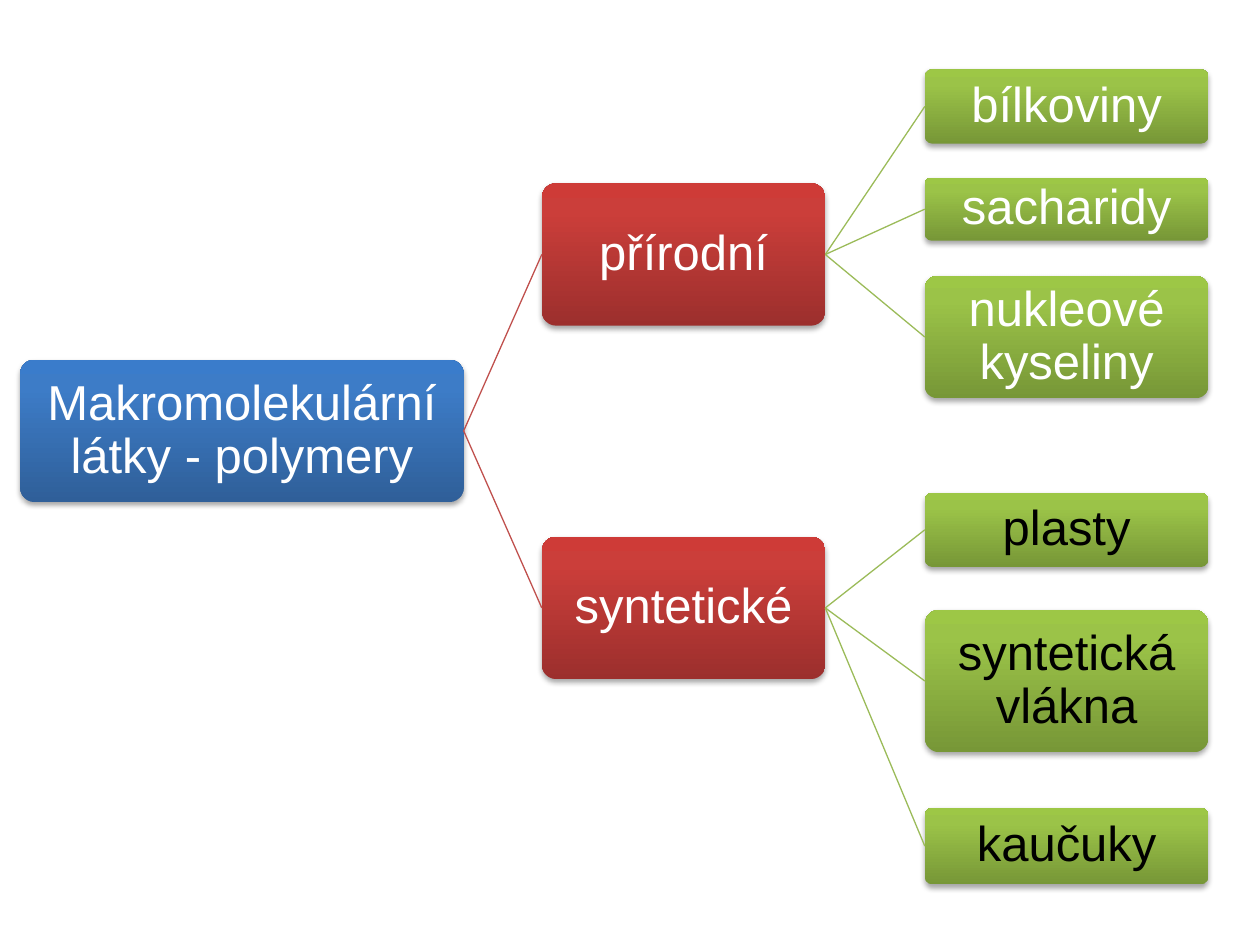
import lxml.etree
import pptx
import pptx.dml.color
import pptx.enum.shapes
import pptx.enum.text
import pptx.oxml.ns
import pptx.util

COLUMNS, ROWS = 100, 75
BLUE = ("2F5F99", "3D7CC7", "3A7CCB")
RED = ("9C2F2D", "CB3E3A", "CE3B37")
GREEN = ("779737", "9BC348", "9DC746")
RED_LINE, GREEN_LINE = "C0504D", "9BBB59"
WHITE, BLACK = "FFFFFF", "000000"

BRANCHES = [
    ("přírodní", 20.2, WHITE, [
        ("bílkoviny", 8.45, 5.9),
        ("sacharidy", 16.6, 5),
        ("nukleové kyseliny", 26.75, 9.7),
    ]),
    ("syntetické", 48.25, BLACK, [
        ("plasty", 42.05, 5.9),
        ("syntetická vlákna", 54.05, 11.3),
        ("kaučuky", 67.15, 6.1),
    ]),
]


def color(value):
    return pptx.dml.color.RGBColor.from_string(value)


def add_xml(parent, tag, **attributes):
    return lxml.etree.SubElement(parent, pptx.oxml.ns.qn(tag), attributes)


def write(frame, text, size=28, font="Arial", fill=WHITE, spacing=0.9):
    frame.word_wrap = True
    frame.vertical_anchor = pptx.enum.text.MSO_ANCHOR.MIDDLE
    frame.margin_left = frame.margin_right = pptx.util.Inches(0.05)
    frame.margin_top = frame.margin_bottom = pptx.util.Inches(0.05)
    paragraph = frame.paragraphs[0]
    paragraph.alignment = pptx.enum.text.PP_ALIGN.CENTER
    paragraph.line_spacing = spacing
    run = paragraph.add_run()
    run.text = text
    run.font.size = pptx.util.Pt(size)
    run.font.name = font
    run.font.color.rgb = color(fill)


class Diagram:
    def __init__(self, presentation):
        self.slide = presentation.slides.add_slide(presentation.slide_layouts[6])
        self.column = presentation.slide_width / COLUMNS
        self.row = presentation.slide_height / ROWS

    def node(self, text, left, middle, width, height, shades, ink=WHITE):
        box = self.slide.shapes.add_shape(
            pptx.enum.shapes.MSO_SHAPE.ROUNDED_RECTANGLE,
            round(left * self.column), round((middle - height / 2) * self.row),
            round(width * self.column), round(height * self.row))
        box.adjustments[0] = 0.1
        self.shade(box, shades)
        box.line.fill.background()
        self.shadow(box)
        write(box.text_frame, text, fill=ink)
        return box

    def shade(self, box, shades):
        box.fill.gradient()
        gradient = box.element.spPr.find(pptx.oxml.ns.qn("a:gradFill"))
        stops = gradient.find(pptx.oxml.ns.qn("a:gsLst"))
        for stop in list(stops):
            stops.remove(stop)
        for position, value in zip((0, 80, 100), shades):
            stop = add_xml(stops, "a:gs", pos=str(position * 1000))
            add_xml(stop, "a:srgbClr", val=value)
        gradient.find(pptx.oxml.ns.qn("a:lin")).set("ang", str(270 * 60000))

    def shadow(self, box):
        box.shadow.inherit = False
        effects = box.element.spPr.find(pptx.oxml.ns.qn("a:effectLst"))
        outer = add_xml(effects, "a:outerShdw", blurRad="40000", dist="23000",
                        dir="5400000", rotWithShape="0")
        add_xml(add_xml(outer, "a:srgbClr", val=BLACK), "a:alpha", val="35000")

    def link(self, parent, child, stroke):
        line = self.slide.shapes.add_connector(
            pptx.enum.shapes.MSO_CONNECTOR.STRAIGHT, 0, 0, 0, 0)
        line.begin_connect(parent, 3)
        line.end_connect(child, 1)
        line.line.color.rgb = color(stroke)
        line.line.width = pptx.util.Pt(0.75)
        add_xml(line.element.spPr, "a:effectLst")


def main():
    presentation = pptx.Presentation()
    presentation.slide_width = pptx.util.Inches(10)
    presentation.slide_height = pptx.util.Inches(7.5)
    diagram = Diagram(presentation)

    polymers = diagram.node("Makromolekulární látky - polymery",
                            1.6, 34.2, 35.2, 11.3, BLUE)
    for origin, origin_middle, ink, examples in BRANCHES:
        group = diagram.node(origin, 43, origin_middle, 22.5, 11.3, RED)
        diagram.link(polymers, group, RED_LINE)
        for example, middle, height in examples:
            leaf = diagram.node(example, 73.4, middle, 22.5, height, GREEN, ink)
            diagram.link(group, leaf, GREEN_LINE)

    presentation.save("out.pptx")


if __name__ == "__main__":
    main()
